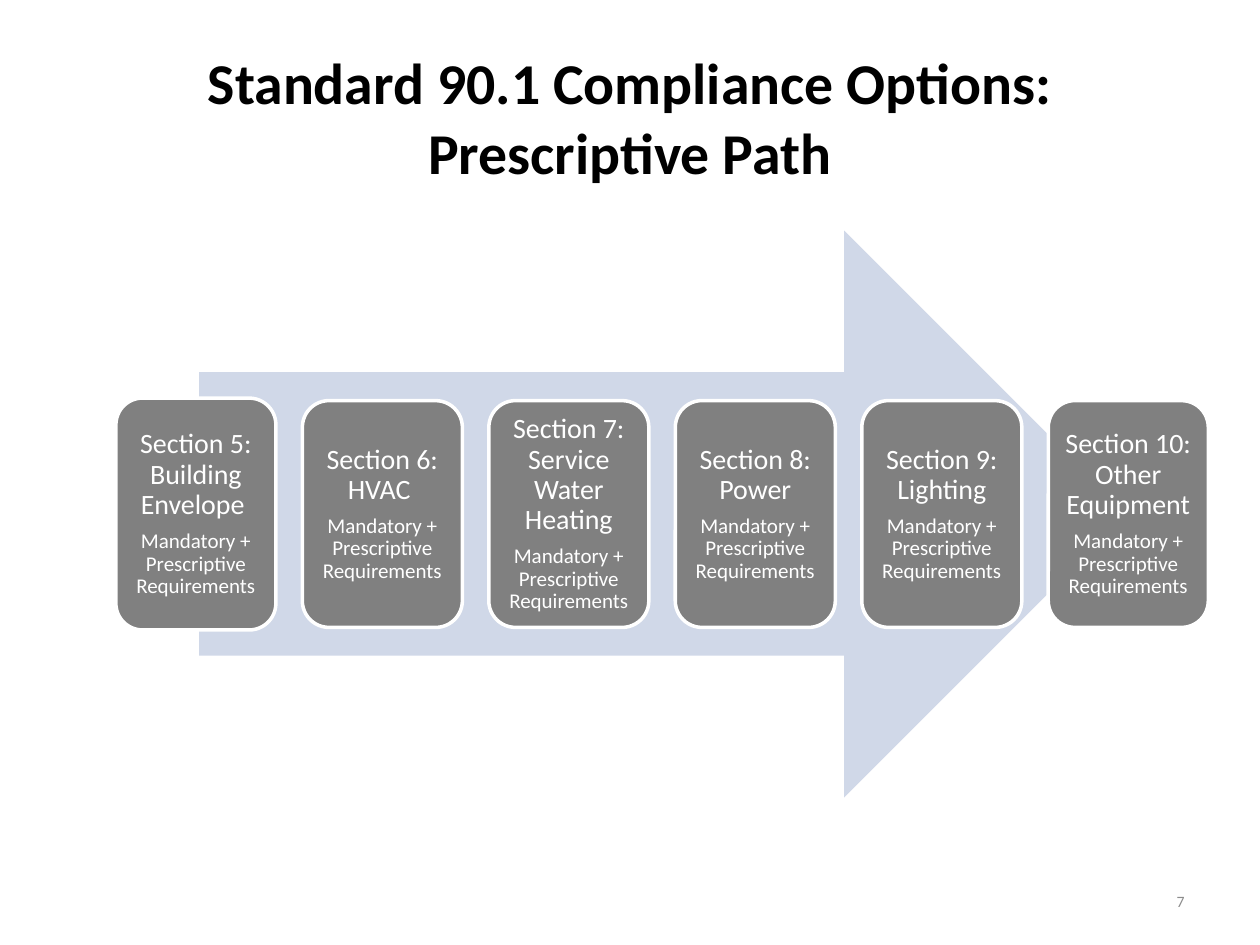
import pptx
import pptx.util
import pptx.dml.color
import pptx.enum.shapes
import pptx.enum.text

Inches = pptx.util.Inches
Pt = pptx.util.Pt
Shape = pptx.enum.shapes.MSO_SHAPE
Align = pptx.enum.text.PP_ALIGN
Anchor = pptx.enum.text.MSO_ANCHOR

TITLE = "Standard 90.1 Compliance Options: Prescriptive Path"
SECTIONS = [
    "Section 5: Building Envelope ",
    "Section 6: HVAC ",
    "Section 7: Service Water Heating",
    "Section 8: Power",
    "Section 9: Lighting",
    "Section 10: Other Equipment ",
]
REQUIREMENT = "Mandatory + Prescriptive Requirements"
PAGE_NUMBER = "7"
COLORS = {"title": "000000", "arrow": "D0D8E8", "card": "808080",
          "white": "FFFFFF", "number": "8C8C8C"}
FONT = "Calibri"

MIDDLE = 4.08
ARROW_LEFT, ARROW_WIDTH, ARROW_HEIGHT = 1.58, 7.37, 4.5
CARD_LEFT, CARD_PITCH, CARD_WIDTH = 0.92, 1.48, 1.27
CARD_HEIGHT, FIRST_CARD_HEIGHT = 1.8, 1.84
CARD_INSET = 0.07


def color(name):
    return pptx.dml.color.RGBColor.from_string(COLORS[name])


def place(shape, left, top, width, height):
    shape.left, shape.top = Inches(left), Inches(top)
    shape.width, shape.height = Inches(width), Inches(height)


def style(para, size, name, align, bold=False):
    para.alignment = align
    for span in para.runs:
        span.font.name = FONT
        span.font.size = Pt(size)
        span.font.bold = bold
        span.font.color.rgb = color(name)


def add_filled(page, kind, left, width, height, name):
    shape = page.shapes.add_shape(kind, Inches(left), Inches(MIDDLE - height / 2),
                                  Inches(width), Inches(height))
    shape.shadow.inherit = False
    shape.fill.solid()
    shape.fill.fore_color.rgb = color(name)
    shape.line.fill.background()
    return shape


def add_card(page, index, heading):
    height = CARD_HEIGHT if index else FIRST_CARD_HEIGHT
    card = add_filled(page, Shape.ROUNDED_RECTANGLE, CARD_LEFT + index * CARD_PITCH,
                      CARD_WIDTH, height, "card")
    card.line.color.rgb = color("white")
    card.line.width = Pt(2)
    frame = card.text_frame
    frame.word_wrap = True
    frame.vertical_anchor = Anchor.MIDDLE
    frame.margin_left = frame.margin_right = Inches(CARD_INSET)
    frame.margin_top = frame.margin_bottom = Inches(CARD_INSET)
    frame.text = f"{heading}\n{REQUIREMENT}"
    for para, size in zip(frame.paragraphs, (16, 12)):
        style(para, size, "white", Align.CENTER)
        para.line_spacing = 0.9
    frame.paragraphs[0].space_after = Pt(5.6)


def main():
    deck = pptx.Presentation()
    deck.slide_width, deck.slide_height = Inches(10), Inches(7.5)
    page = deck.slides.add_slide(deck.slide_layouts[5])

    title = page.shapes.title
    place(title, 0.5, 0.3, 9, 1.25)
    title.text_frame.text = TITLE
    title.text_frame.vertical_anchor = Anchor.MIDDLE
    style(title.text_frame.paragraphs[0], 33, "title", Align.CENTER, bold=True)

    add_filled(page, Shape.RIGHT_ARROW, ARROW_LEFT, ARROW_WIDTH, ARROW_HEIGHT, "arrow")
    for index, heading in enumerate(SECTIONS):
        add_card(page, index, heading)

    number = page.shapes.add_textbox(Inches(7.17), Inches(6.95), Inches(2.33), Inches(0.4))
    number.text_frame.word_wrap = True
    number.text_frame.vertical_anchor = Anchor.MIDDLE
    number.text_frame.text = PAGE_NUMBER
    style(number.text_frame.paragraphs[0], 9, "number", Align.RIGHT)

    deck.save("out.pptx")


if __name__ == "__main__":
    main()
